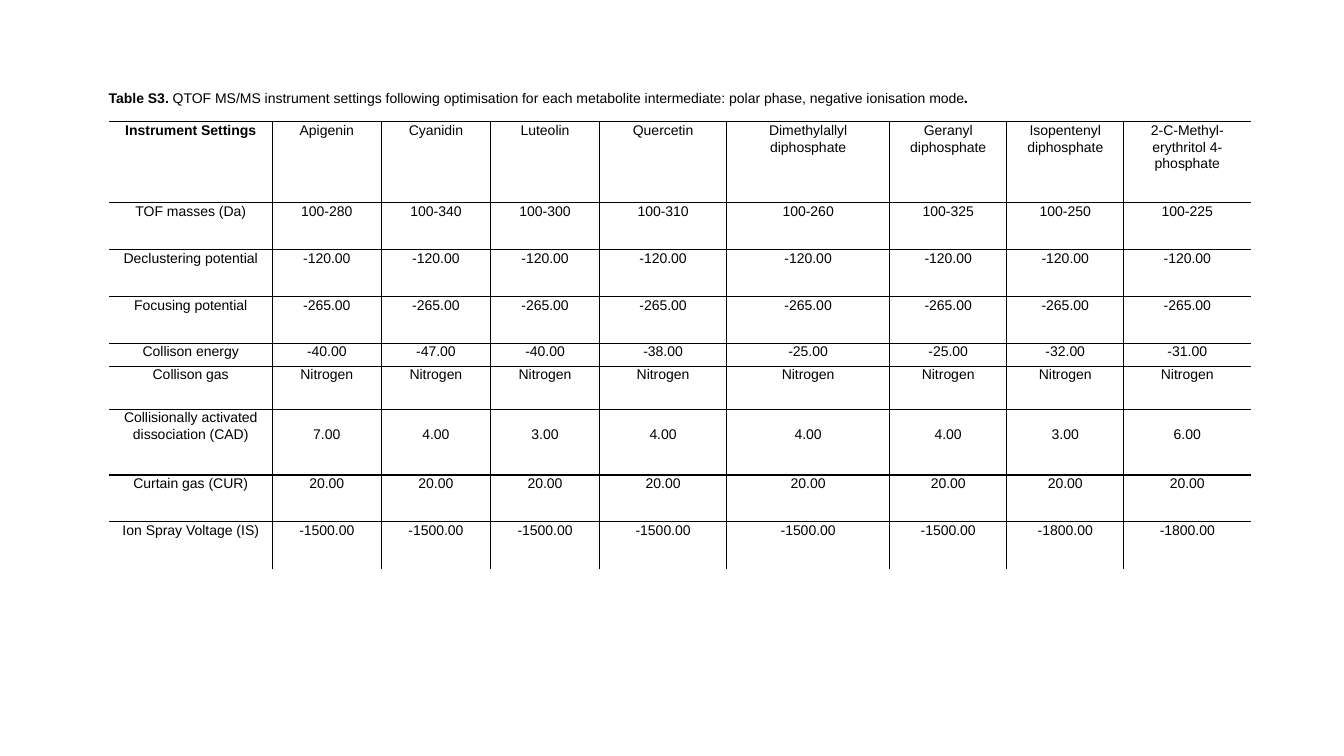
from lxml import etree
from pptx import Presentation
from pptx.dml.color import RGBColor
from pptx.enum.text import MSO_AUTO_SIZE, PP_ALIGN
from pptx.oxml.ns import qn
from pptx.util import Cm, Pt

CENTER = PP_ALIGN.CENTER
GROW = MSO_AUTO_SIZE.SHAPE_TO_FIT_TEXT
BLACK = RGBColor(0, 0, 0)

# Content: text, font, size, bold
CAPTION = [
    ("Table S3. ", "Arial", 10, True),
    ("QTOF MS/MS instrument settings following optimisation for each "
     "metabolite intermediate: polar phase, negative ionisation mode",
     "Arial", 10, False),
    (".", "Calibri", 12, True),
]
ROWS = [
    ["Instrument Settings", "Apigenin", "Cyanidin", "Luteolin", "Quercetin",
     "Dimethylallyl diphosphate", "Geranyl diphosphate",
     "Isopentenyl diphosphate", "2-C-Methyl-erythritol 4-phosphate"],
    ["TOF masses (Da)", "100-280", "100-340", "100-300", "100-310",
     "100-260", "100-325", "100-250", "100-225"],
    ["Declustering potential"] + ["-120.00"] * 8,
    ["Focusing potential"] + ["-265.00"] * 8,
    ["Collison energy", "-40.00", "-47.00", "-40.00", "-38.00",
     "-25.00", "-25.00", "-32.00", "-31.00"],
    ["Collison gas"] + ["Nitrogen"] * 8,
    ["Collisionally activated dissociation (CAD)", "7.00", "4.00", "3.00",
     "4.00", "4.00", "4.00", "3.00", "6.00"],
    ["Curtain gas (CUR)"] + ["20.00"] * 8,
    ["Ion Spray Voltage (IS)"] + ["-1500.00"] * 6 + ["-1800.00"] * 2,
]

# Sizes in cm
WIDTHS = [4.11, 2.75, 2.75, 2.75, 3.2, 4.11, 2.95, 2.95, 3.2]
HEIGHTS = [2.04, 1.18, 1.18, 1.18, 0.58, 1.08, 1.66, 1.18, 1.18]
CAD_ROW = 6
LINE = 0.43  # one line of text


def add_run(para, text, font, size, bold):
    run = para.add_run()
    run.text = text
    run.font.name = font
    run.font.size = Pt(size)
    run.font.bold = bold
    run.font.color.rgb = BLACK


def set_edge(cell, side, shown):
    props = cell._tc.get_or_add_tcPr()
    edge = etree.SubElement(props, qn("a:ln" + side), w=str(Pt(1)))
    if shown:
        fill = etree.SubElement(edge, qn("a:solidFill"))
        etree.SubElement(fill, qn("a:srgbClr"), val=str(BLACK))
    else:
        etree.SubElement(edge, qn("a:noFill"))


deck = Presentation()
deck.slide_width, deck.slide_height = Cm(33.87), Cm(19.05)
slide = deck.slides.add_slide(deck.slide_layouts[6])

# Caption
box = slide.shapes.add_textbox(Cm(2.49), Cm(2.06), Cm(25.45), Cm(0.76))
frame = box.text_frame
frame.word_wrap = True
frame.auto_size = GROW
for part in CAPTION:
    add_run(frame.paragraphs[0], *part)

# Table
grid = slide.shapes.add_table(
    len(ROWS), len(WIDTHS), Cm(2.75), Cm(3.07),
    Cm(sum(WIDTHS)), Cm(sum(HEIGHTS))).table
grid.first_row = grid.horz_banding = False
for col, width in zip(grid.columns, WIDTHS):
    col.width = Cm(width)
for row, height in zip(grid.rows, HEIGHTS):
    row.height = Cm(height)

# Cells: inner rules and a top rule, open at the other sides
last_r, last_c = len(ROWS) - 1, len(WIDTHS) - 1
for r, row in enumerate(ROWS):
    for c, text in enumerate(row):
        cell = grid.cell(r, c)
        cell.margin_left = cell.margin_right = Cm(0.18)
        cell.margin_top = Cm(LINE if r == CAD_ROW and c > 0 else 0)
        cell.margin_bottom = 0
        edges = {"L": c > 0, "R": c < last_c, "T": True, "B": r < last_r}
        for side, shown in edges.items():
            set_edge(cell, side, shown)
        cell.fill.background()
        para = cell.text_frame.paragraphs[0]
        para.alignment = CENTER
        para.line_spacing = 1.07
        add_run(para, text, "Arial", 10, r == 0 and c == 0)

deck.save("out.pptx")
